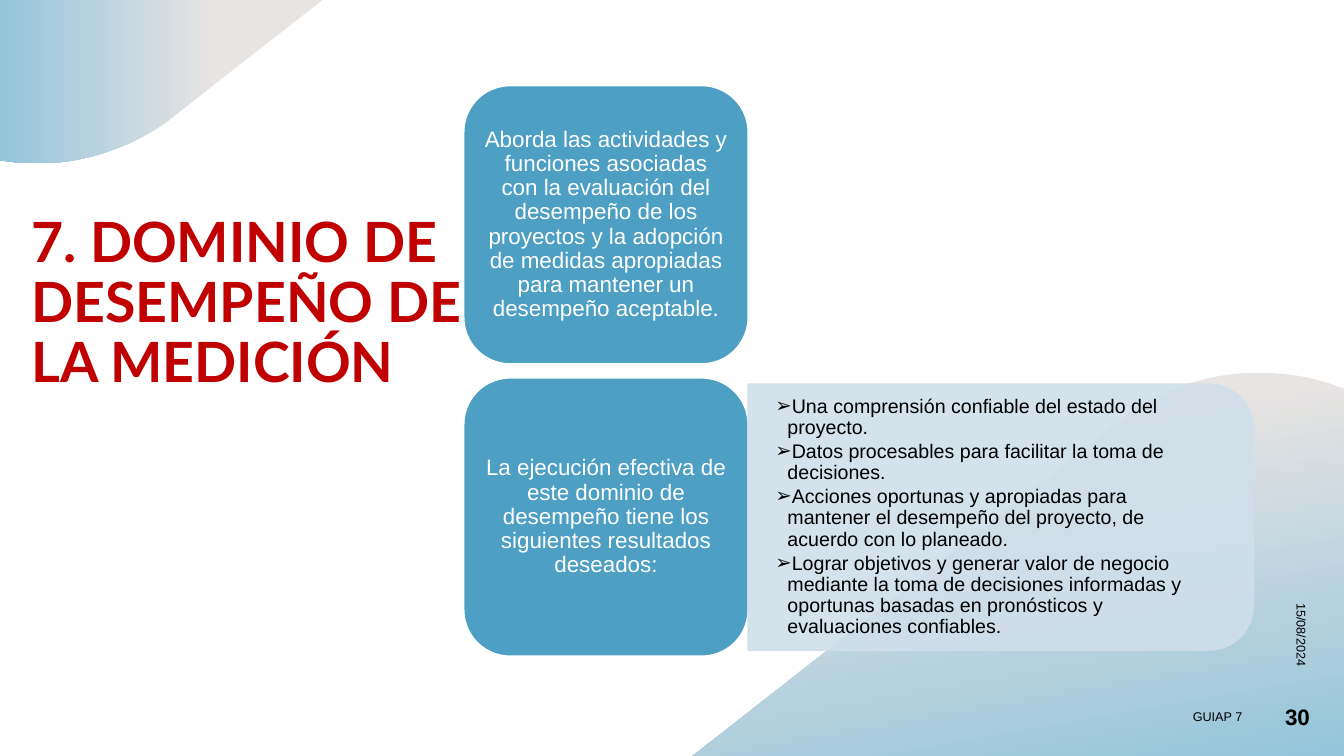
from dataclasses import dataclass

from lxml import etree
from pptx import Presentation
from pptx.dml.color import RGBColor
from pptx.enum import shapes, text
from pptx.oxml import ns
from pptx.util import Inches, Pt


@dataclass(frozen=True)
class Theme:
    heading_font: str = "Lato"
    body_font: str = "Arial"
    heading: str = "C00000"
    ink: str = "000000"
    paper: str = "FFFFFF"
    card: str = "4D9FC3"
    panel: str = "D0DFE9"
    wave_pale: str = "E8E4E2"
    wave_blue: str = "94C5DB"
    title_size: float = 39.6
    card_size: float = 16
    list_size: float = 14
    footer_size: float = 9


THEME = Theme()
TITLE = "7. DOMINIO DE DESEMPEÑO DE LA MEDICIÓN"
CARDS = [
    "Aborda las actividades y funciones asociadas con la evaluación del desempeño de los "
    "proyectos y la adopción de medidas apropiadas para mantener un desempeño aceptable.",
    "La ejecución efectiva de este dominio de desempeño tiene los siguientes resultados deseados:",
]
RESULTS = [
    "Una comprensión confiable del estado del proyecto.",
    "Datos procesables para facilitar la toma de decisiones.",
    "Acciones oportunas y apropiadas para mantener el desempeño del proyecto, de acuerdo con lo planeado.",
    "Lograr objetivos y generar valor de negocio mediante la toma de decisiones informadas y "
    "oportunas basadas en pronósticos y evaluaciones confiables.",
]
# A pair is a straight step; six numbers are a Bézier curve.
LOWER_WAVE = [
    (12.53, 3.7), (12.77, 3.7, 13, 3.74, 13.23, 3.82), (13.33, 3.86), (13.33, 7.5),
    (6.87, 7.5), (11.16, 4.14), (11.2, 4.1), (11.57, 3.85, 11.98, 3.71, 12.4, 3.7),
    (12.44, 3.7, 12.48, 3.69, 12.53, 3.7),
]
UPPER_WAVE = [
    (0, 0), (3.2, 0), (1.7, 1.17), (1.65, 1.21), (1.29, 1.46, 0.88, 1.6, 0.46, 1.62),
    (0.42, 1.62, 0.37, 1.62, 0.33, 1.62), (0.27, 1.62, 0.21, 1.61, 0.15, 1.61), (0, 1.59),
]


def color(value):
    return RGBColor.from_string(value)


def inches(lengths):
    return [Inches(length) for length in lengths]


def place(shape, box):
    shape.left, shape.top, shape.width, shape.height = inches(box)


def write(frame, lines, *, size, ink=THEME.ink, font=THEME.body_font, bold=False,
          align=text.PP_ALIGN.LEFT, anchor=text.MSO_ANCHOR.MIDDLE, margins=(0.1, 0.05),
          spacing=1.0, after=0, bullet=None, level=0):
    """Fill a text frame with one paragraph per line."""
    frame.word_wrap = True
    frame.auto_size = text.MSO_AUTO_SIZE.NONE
    frame.vertical_anchor = anchor
    frame.margin_left = frame.margin_right = Inches(margins[0])
    frame.margin_top = frame.margin_bottom = Inches(margins[1])
    for index, line in enumerate(lines):
        paragraph = frame.add_paragraph() if index else frame.paragraphs[0]
        paragraph.alignment, paragraph.level = align, level
        paragraph.line_spacing = spacing
        paragraph.space_before, paragraph.space_after = Pt(0), Pt(after)
        run = paragraph.add_run()
        run.text = line
        run.font.name, run.font.size, run.font.bold = font, Pt(size), bold
        run.font.color.rgb = color(ink)
        if bullet:
            properties = paragraph._p.get_or_add_pPr()
            properties.set("marL", str(Inches(0.12)))
            properties.set("indent", str(-Inches(0.12)))
            etree.SubElement(properties, ns.qn("a:buChar")).set("char", bullet)


def add_filled(slide, kind, box, fill, line):
    shape = slide.shapes.add_shape(kind, *inches(box))
    shape.shadow.inherit = False
    shape.fill.solid()
    shape.fill.fore_color.rgb = color(fill)
    shape.line.color.rgb = color(line)
    shape.line.width = Pt(1)
    return shape


def outline_points(steps, pieces=16):
    """Turn straight and Bézier steps into a list of points."""
    points = [steps[0]]
    for step in steps[1:]:
        if len(step) == 2:
            points.append(step)
            continue
        corners = [points[-1], step[:2], step[2:4], step[4:]]
        for piece in range(1, pieces + 1):
            t = piece / pieces
            weights = ((1 - t) ** 3, 3 * t * (1 - t) ** 2, 3 * t * t * (1 - t), t ** 3)
            points.append(tuple(sum(weight * corner[axis] for weight, corner in zip(weights, corners))
                                for axis in (0, 1)))
    return points


def add_wave(slide, steps, pale_until, angle):
    points = [inches(point) for point in outline_points(steps)]
    builder = slide.shapes.build_freeform(*points[0])
    builder.add_line_segments(points[1:], close=True)
    wave = builder.convert_to_shape()
    wave.shadow.inherit = False
    wave.line.fill.background()
    wave.fill.gradient()
    wave.fill.gradient_angle = angle
    stops = ((pale_until, THEME.wave_pale), (1, THEME.wave_blue))
    for stop, (position, value) in zip(wave.fill.gradient_stops, stops):
        stop.position = position
        stop.color.rgb = color(value)


def add_title(slide, box):
    title = slide.shapes.title
    place(title, box)
    write(title.text_frame, [TITLE], size=THEME.title_size, ink=THEME.heading,
          font=THEME.heading_font, bold=True, anchor=text.MSO_ANCHOR.TOP, spacing=0.9)


def add_cards(slide, box, gap=0.14):
    left, top, width, height = box
    card_height = (height - gap * (len(CARDS) - 1)) / len(CARDS)
    for index, words in enumerate(CARDS):
        card_box = (left, top + index * (card_height + gap), width, card_height)
        card = add_filled(slide, shapes.MSO_SHAPE.ROUNDED_RECTANGLE, card_box, THEME.card, THEME.paper)
        write(card.text_frame, [words], size=THEME.card_size, ink=THEME.paper,
              align=text.PP_ALIGN.CENTER, margins=(0.07, 0.03), spacing=0.9)


def add_results(slide, box, opacity=90):
    """Draw the panel, rounded on its right side, with the bulleted list over it."""
    left, top, width, height = box
    turned = (left + (width - height) / 2, top + (height - width) / 2, height, width)
    panel = add_filled(slide, shapes.MSO_SHAPE.ROUND_2_SAME_RECTANGLE, turned, THEME.panel, THEME.panel)
    panel.rotation = 90
    for tone in panel._element.spPr.iter(ns.qn("a:srgbClr")):
        etree.SubElement(tone, ns.qn("a:alpha")).set("val", str(opacity * 1000))

    body = slide.placeholders[1]
    place(body, (left, top + 0.13, width - 0.13, height - 0.26))
    write(body.text_frame, RESULTS, size=THEME.list_size, margins=(0.27, 0.14),
          spacing=0.9, after=2, bullet="➢", level=1)
    panel._element.addnext(body._element)


def add_footer(slide, box):
    left, top, width, height = box
    number_width = 0.67
    entries = [
        ("15/08/2024", (left + 2.04, top - 1.85, 2.9, height), 90, THEME.footer_size, False),
        ("GUIAP 7", (left, top, width - number_width, height), 0, THEME.footer_size, False),
        ("30", (left + width - number_width, top, number_width, height), 0, THEME.card_size, True),
    ]
    for words, entry_box, rotation, size, bold in entries:
        entry = slide.shapes.add_textbox(*inches(entry_box))
        entry.rotation = rotation
        write(entry.text_frame, [words], size=size, bold=bold, align=text.PP_ALIGN.RIGHT)


def main():
    presentation = Presentation()
    presentation.slide_width, presentation.slide_height = Inches(13.33), Inches(7.5)
    slide = presentation.slides.add_slide(presentation.slide_layouts[1])
    add_wave(slide, LOWER_WAVE, pale_until=0.23, angle=280)
    add_wave(slide, UPPER_WAVE, pale_until=0.33, angle=180)
    add_title(slide, (0.21, 2.08, 4.53, 1.92))
    add_cards(slide, (4.6, 0.85, 2.82, 5.66))
    add_results(slide, (7.42, 3.81, 5.01, 2.64))
    add_footer(slide, (9.42, 6.91, 3.67, 0.4))
    presentation.save("out.pptx")


if __name__ == "__main__":
    main()
